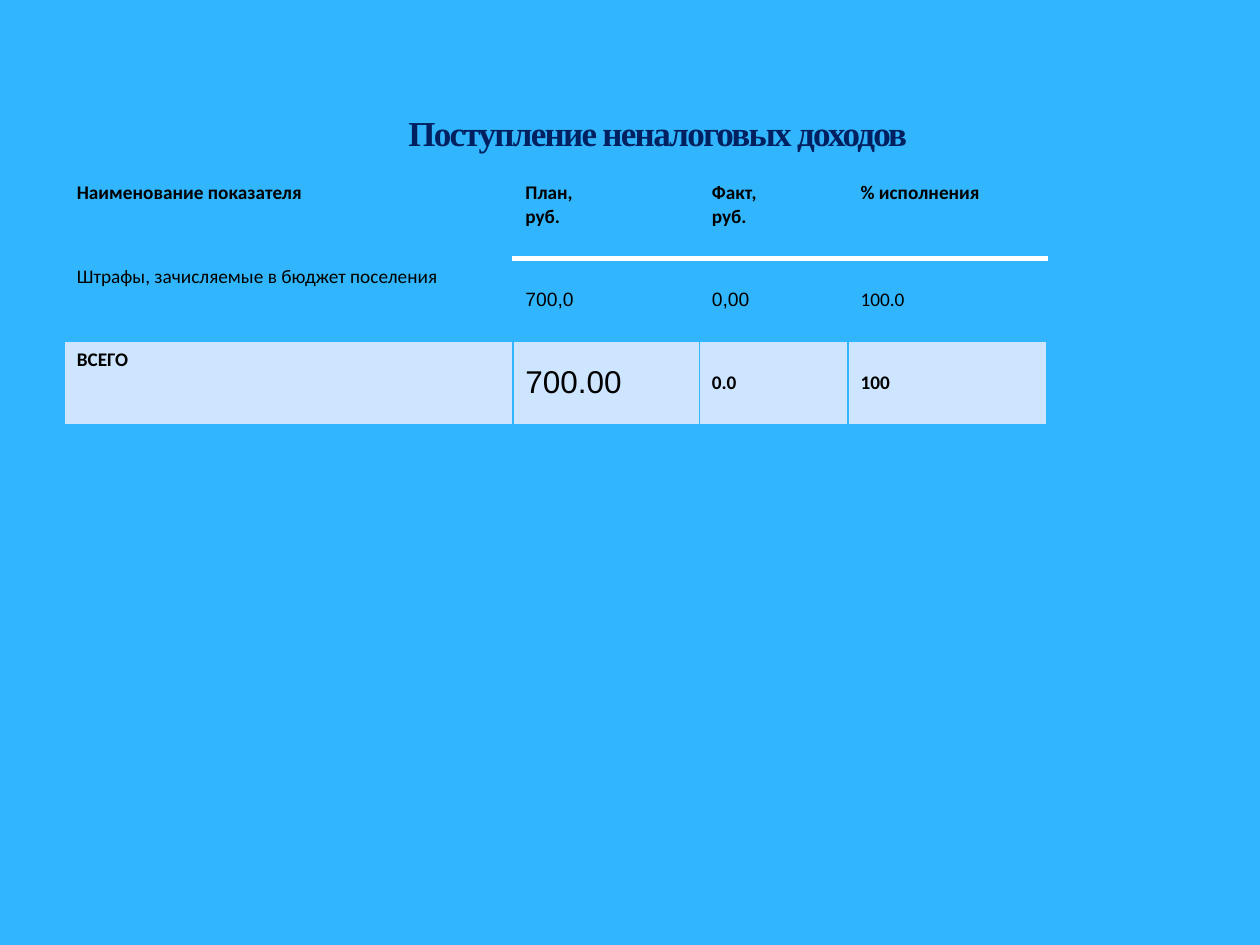
"""Build the slide with the table of non-tax revenue."""
from dataclasses import dataclass

import lxml.etree
import pptx
import pptx.dml.color
import pptx.enum.text
import pptx.oxml.ns
import pptx.util
from pptx.util import Inches


@dataclass(frozen=True)
class Theme:
    sky: str = "31B6FD"
    pale: str = "CDE5FE"
    navy: str = "002060"
    black: str = "000000"
    white: str = "FFFFFF"
    title_size: int = 20
    cell_size: int = 11
    total_size: int = 18


theme = Theme()
qn = pptx.oxml.ns.qn


def format_span(span, font, size, color, bold):
    span.font.name = font
    span.font.size = pptx.util.Pt(size)
    span.font.color.rgb = pptx.dml.color.RGBColor.from_string(color)
    span.font.bold = bold


def add_border(cell, side, color, points):
    properties = cell._tc.get_or_add_tcPr()
    line = lxml.etree.SubElement(properties, qn(f"a:ln{side}"), w=str(pptx.util.Pt(points)))
    fill = lxml.etree.SubElement(line, qn("a:solidFill"))
    lxml.etree.SubElement(fill, qn("a:srgbClr"), val=color)


deck = pptx.Presentation()
deck.slide_width = Inches(10)
deck.slide_height = Inches(7.5)
page = deck.slides.add_slide(deck.slide_layouts[5])
page.background.fill.solid()
page.background.fill.fore_color.rgb = pptx.dml.color.RGBColor.from_string(theme.sky)

title = page.shapes.title
title.left, title.top = Inches(1.38), Inches(0.68)
title.width, title.height = Inches(7.68), Inches(0.74)
title.text_frame.text = "Поступление неналоговых доходов"
title.text_frame.vertical_anchor = pptx.enum.text.MSO_ANCHOR.MIDDLE
para = title.text_frame.paragraphs[0]
para.alignment = pptx.enum.text.PP_ALIGN.CENTER
span = para.runs[0]
format_span(span, "Times New Roman", theme.title_size, theme.navy, True)
span.font._element.set("spc", "-100")

rows = [
    ["Наименование показателя", "План,\nруб.", "Факт,\nруб.", "% исполнения"],
    ["Штрафы, зачисляемые в бюджет поселения", "700,0", "0,00", "100.0"],
    ["ВСЕГО", "700.00", "0.0", "100"],
]
column_widths = [3.56, 1.48, 1.18, 1.58]
row_height = 0.66
row_fills = [theme.sky, theme.sky, theme.pale]
special_styles = {
    (1, 1): ("Arial", theme.cell_size, False),
    (1, 2): ("Arial", theme.cell_size, False),
    (2, 1): ("Arial", theme.total_size, False),
}

table = page.shapes.add_table(
    len(rows), len(column_widths), Inches(0.51), Inches(1.39),
    Inches(sum(column_widths)), Inches(row_height * len(rows)),
).table
for column, width in zip(table.columns, column_widths):
    column.width = Inches(width)

for row_index, texts in enumerate(rows):
    table.rows[row_index].height = Inches(row_height)
    for column_index, text in enumerate(texts):
        cell = table.cell(row_index, column_index)
        cell.text_frame.text = text
        if row_index and column_index:
            cell.vertical_anchor = pptx.enum.text.MSO_ANCHOR.MIDDLE
        font, size, bold = special_styles.get(
            (row_index, column_index), ("Calibri", theme.cell_size, row_index != 1)
        )
        for para in cell.text_frame.paragraphs:
            for span in para.runs:
                format_span(span, font, size, theme.black, bold)
        header_rule = (theme.white if column_index else theme.sky, 3)
        borders = {side: (theme.sky, 1) for side in "LRTB"}
        if row_index == 0:
            borders["B"] = header_rule
        elif row_index == 1:
            borders["T"] = header_rule
        for side, (color, points) in borders.items():
            add_border(cell, side, color, points)
        cell.fill.solid()
        cell.fill.fore_color.rgb = pptx.dml.color.RGBColor.from_string(row_fills[row_index])

deck.save("out.pptx")
